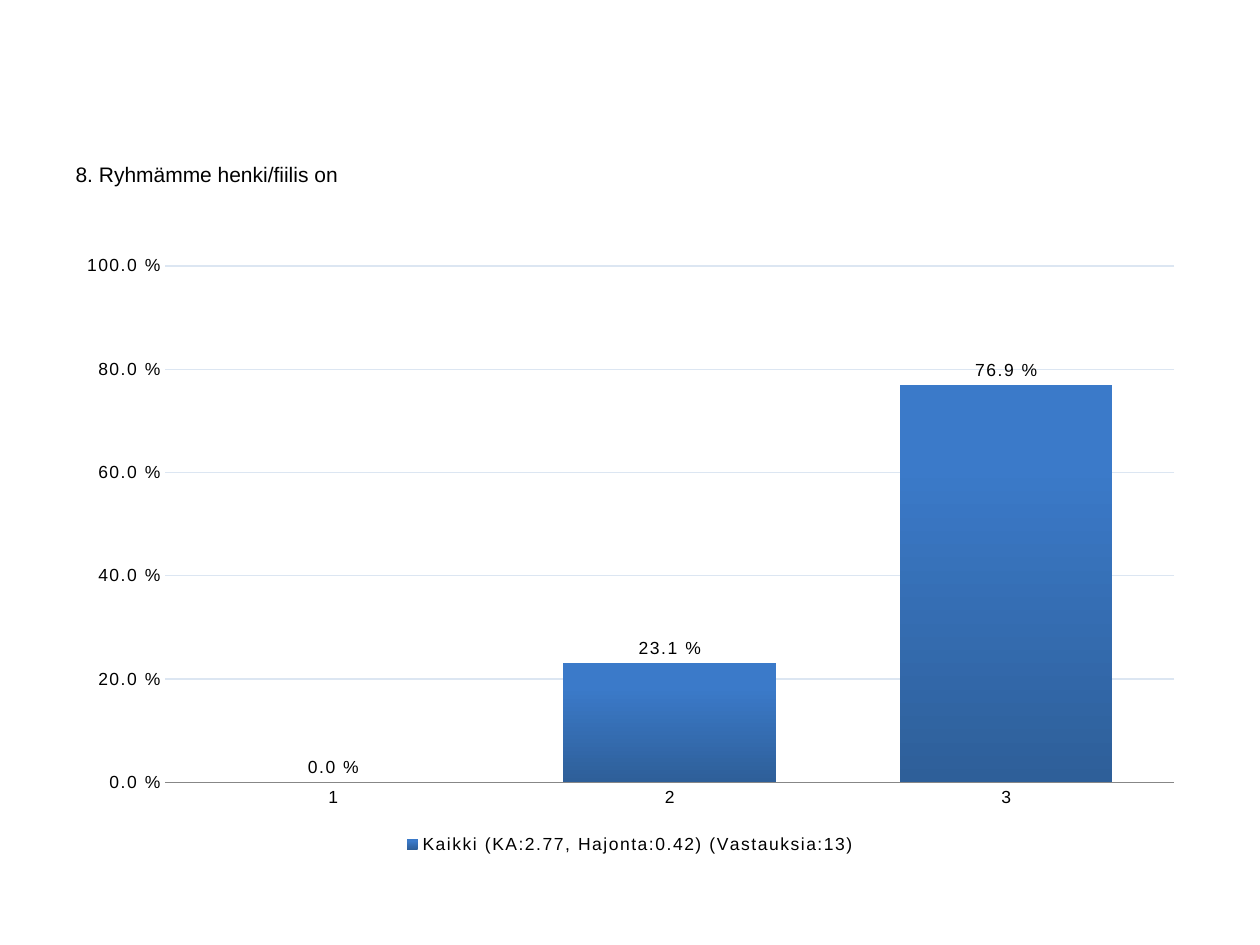
from lxml import etree
from pptx import Presentation
from pptx import util as u
from pptx.chart.data import CategoryChartData
from pptx.dml.color import RGBColor
from pptx.enum import chart as ch, text
from pptx.oxml import ns, parse_xml

BLACK = RGBColor(0x00, 0x00, 0x00)
BAR_DARK = RGBColor(0x2E, 0x5F, 0x99)
BAR_LIGHT = RGBColor(0x3B, 0x7A, 0xC9)
GRID = RGBColor(0xDC, 0xE6, 0xF2)
AXIS = RGBColor(0x87, 0x87, 0x87)
FONT = "Arial"
PERCENT = "0.0\\ %"


def format_font(font, size, color=BLACK, name=FONT):
    font.size, font.name, font.bold = u.Pt(size), name, False
    font.color.rgb = color


def write_text(frame, content, size=12, color=BLACK, name=FONT):
    """Write one unbulleted paragraph."""
    frame.word_wrap = True
    frame.vertical_anchor = text.MSO_ANCHOR.TOP
    paragraph = frame.paragraphs[0]
    paragraph.space_before = u.Pt(size * 0.2)
    run = paragraph.add_run()
    run.text = content
    format_font(run.font, size, color, name)
    properties = paragraph._p.get_or_add_pPr()
    properties.set("marL", "0")
    properties.set("indent", "0")
    etree.SubElement(properties, ns.qn("a:buNone"))


def add_question(slide, content):
    slide.shapes.title.element.getparent().remove(slide.shapes.title.element)
    question = slide.placeholders[1]
    question.left, question.top = u.Inches(0.5), u.Inches(1.23)
    question.width, question.height = u.Inches(9), u.Inches(0.59)
    write_text(question.text_frame, content)


def style_axes(chart):
    answers, share = chart.category_axis, chart.value_axis
    for axis in (answers, share):
        axis.major_tick_mark = axis.minor_tick_mark = ch.XL_TICK_MARK.NONE
        format_font(axis.tick_labels.font, 10)
    answers.format.line.color.rgb = AXIS
    answers.format.line.width = u.Pt(0.75)

    share.minimum_scale, share.maximum_scale, share.major_unit = 0, 1, 0.2
    share.tick_labels.number_format = PERCENT
    share.tick_labels.number_format_is_linked = False
    share.format.line.fill.background()
    share.major_gridlines.format.line.color.rgb = GRID
    share.major_gridlines.format.line.width = u.Pt(0.75)


def style_bars(plot):
    plot.gap_width = 58
    plot.vary_by_categories = False
    bars = plot.series[0]
    bars.invert_if_negative = False
    fill = bars.format.fill
    fill.gradient()
    fill.gradient_angle = 90
    for stop, color, position in zip(fill.gradient_stops, (BAR_DARK, BAR_LIGHT), (0, 0.8)):
        stop.color.rgb, stop.position = color, position

    labels = bars.data_labels
    labels.show_value = True
    labels.number_format, labels.number_format_is_linked = PERCENT, False
    labels.position = ch.XL_LABEL_POSITION.OUTSIDE_END
    format_font(labels.font, 10)


def place_plot(chart, **box):
    """Fix the inner plot area, in fractions of the chart."""
    modes = '<c:layoutTarget val="inner"/><c:xMode val="edge"/><c:yMode val="edge"/>'
    sizes = "".join(f'<c:{key} val="{value}"/>' for key, value in box.items())
    area = chart.element.find(".//" + ns.qn("c:plotArea"))
    for layout in area.findall(ns.qn("c:layout")):
        area.remove(layout)
    area.insert(0, parse_xml(
        f'<c:layout {ns.nsdecls("c")}><c:manualLayout>{modes}{sizes}</c:manualLayout></c:layout>'))


def add_answer_chart(slide, series_name, answers):
    data = CategoryChartData(number_format=PERCENT)
    data.categories = list(answers)
    data.add_series(series_name, list(answers.values()))
    chart = slide.shapes.add_chart(
        ch.XL_CHART_TYPE.COLUMN_CLUSTERED, u.Inches(0.5), u.Inches(1.94),
        u.Inches(9), u.Inches(4.88), data).chart
    format_font(chart.font, 10, name="Calibri")
    chart.has_title = False
    style_axes(chart)
    style_bars(chart.plots[0])

    chart.has_legend = True
    chart.legend.position = ch.XL_LEGEND_POSITION.BOTTOM
    chart.legend.include_in_layout = False
    format_font(chart.legend.font, 10)
    place_plot(chart, x=0.09, y=0.035, w=0.89, h=0.84)

    # Letter spacing of all chart text
    for properties in chart.element.iter(ns.qn("a:defRPr")):
        properties.set("spc", "100")


def main():
    deck = Presentation()
    deck.slide_width, deck.slide_height = u.Inches(10), u.Inches(7.5)
    slide = deck.slides.add_slide(deck.slide_layouts[1])
    add_question(slide, "8. Ryhmämme henki/fiilis on")
    add_answer_chart(slide, "Kaikki (KA:2.77, Hajonta:0.42) (Vastauksia:13)",
                     {"1": 0, "2": 0.231, "3": 0.769})
    deck.save("out.pptx")


if __name__ == "__main__":
    main()
